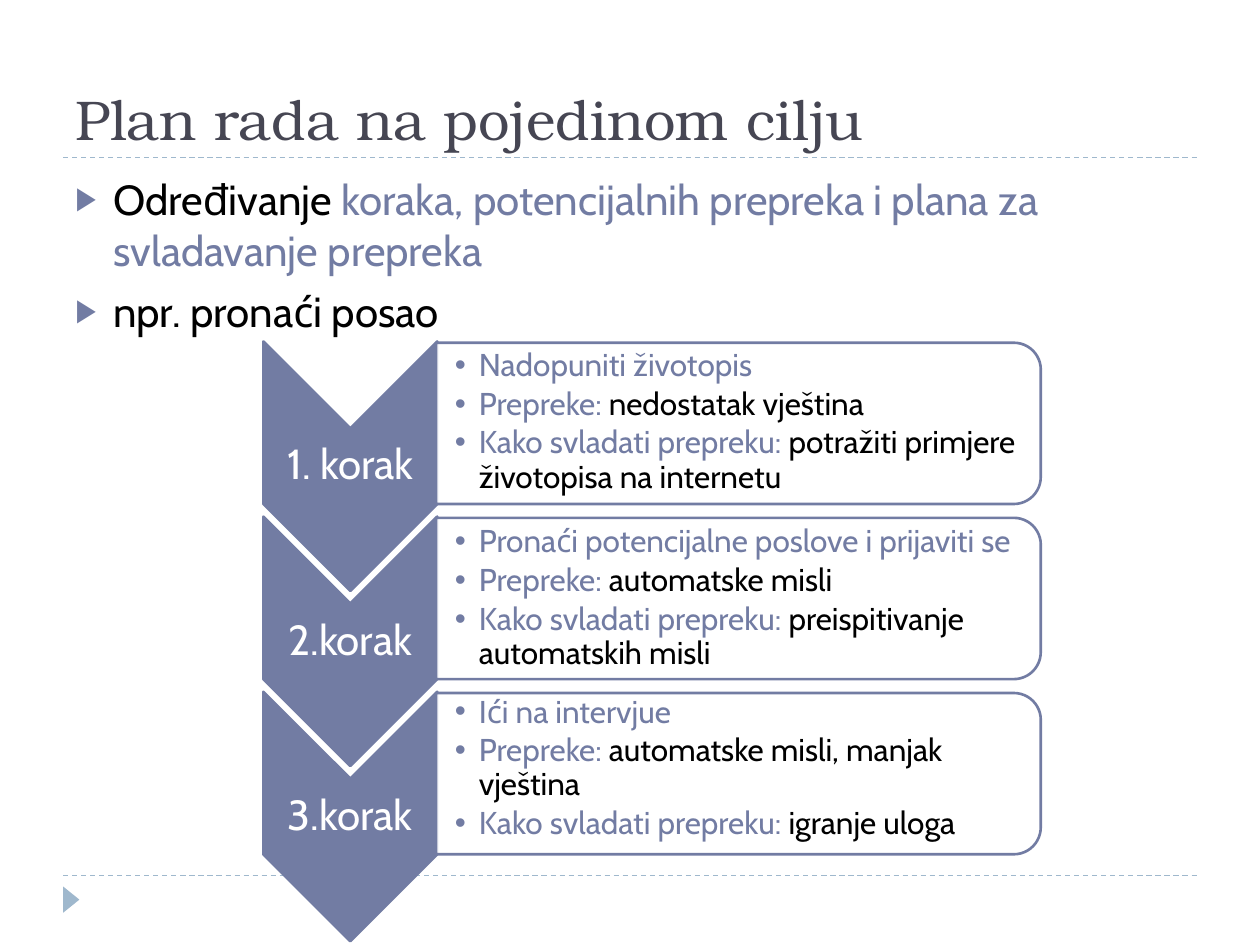
from lxml import etree
from pptx import Presentation
from pptx import util as u
from pptx.dml.color import RGBColor
from pptx.enum import dml, shapes, text
from pptx.oxml.ns import qn

COLORS = {"accent": "727CA3", "rule": "9FB8CD", "title": "464653",
          "black": "000000", "white": "FFFFFF"}
BODY, HEAD = "Cabin", "TeX Gyre Bonum"
COLS, ROWS = 100, 75

INTRO = [
    [("Određivanje ", "black"),
     ("koraka, potencijalnih prepreka i plana za svladavanje prepreka", "accent")],
    [("npr. pronaći posao", "black")],
]
# label, goal, obstacle, solution, rows the text sits above the card's middle
STEPS = [
    ("1. korak", "Nadopuniti životopis", "nedostatak vještina",
     "potražiti primjere životopisa na internetu", 0.1),
    ("2.korak", "Pronaći potencijalne poslove i prijaviti se", "automatske misli",
     "preispitivanje automatskih misli", 0),
    ("3.korak", "Ići na intervjue", "automatske misli, manjak vještina",
     "igranje uloga", 0.4),
]


def rgb(name):
    return RGBColor.from_string(COLORS[name])


def add_bullet(p, char, indent, size=100):
    pPr = p._p.get_or_add_pPr()
    pPr.set("marL", str(u.Inches(indent)))
    pPr.set("indent", str(-u.Inches(indent)))
    clr = etree.SubElement(pPr, qn("a:buClr"))
    etree.SubElement(clr, qn("a:srgbClr"), val=COLORS["accent"])
    etree.SubElement(pPr, qn("a:buSzPct"), val=str(size * 1000))
    etree.SubElement(pPr, qn("a:buFont"), typeface="Arial")
    etree.SubElement(pPr, qn("a:buChar"), char=char)


def write(tf, paragraphs, size, font=BODY, align=text.PP_ALIGN.LEFT,
          anchor=text.MSO_ANCHOR.MIDDLE, insets=(0.1, 0.05, 0.1, 0.05),
          spacing=1.0, before=0, after=0, bullet=None):
    """Fill a frame; each paragraph is a list of (wording, colour name) runs."""
    tf.word_wrap = True
    tf.vertical_anchor = anchor
    tf.margin_left, tf.margin_top, tf.margin_right, tf.margin_bottom = map(u.Inches, insets)
    for i, runs in enumerate(paragraphs):
        p = tf.add_paragraph() if i else tf.paragraphs[0]
        p.alignment, p.line_spacing = align, spacing
        p.space_before, p.space_after = u.Pt(before), u.Pt(after)
        if bullet:
            add_bullet(p, *bullet)
        for wording, color in runs:
            r = p.add_run()
            r.text = wording
            r.font.name, r.font.size = font, u.Pt(size)
            r.font.color.rgb = rgb(color)


class Deck:
    """Places elements by their centre on a grid of COLS by ROWS."""

    def __init__(self):
        self.prs = Presentation()
        self.prs.slide_width, self.prs.slide_height = u.Inches(10), u.Inches(7.5)
        self.s = self.prs.slides.add_slide(self.prs.slide_layouts[6])

    def x(self, cols):
        return round(self.prs.slide_width * cols / COLS)

    def y(self, rows):
        return round(self.prs.slide_height * rows / ROWS)

    def frame(self, cx, cy, w, h):
        return self.x(cx - w / 2), self.y(cy - h / 2), self.x(w), self.y(h)

    def rule(self, row):
        line = self.s.shapes.add_connector(shapes.MSO_CONNECTOR.STRAIGHT,
                                           self.x(5), self.y(row), self.x(95), self.y(row))
        line.line.color.rgb = rgb("rule")
        line.line.width = u.Pt(0.75)
        line.line.dash_style = dml.MSO_LINE.DASH
        etree.SubElement(line._element.spPr, qn("a:effectLst"))

    def turned_shape(self, kind, center, size, fill, outline=None, opacity=100):
        """Add a preset shape turned a quarter clockwise; size is before turning."""
        sp = self.s.shapes.add_shape(kind, *self.frame(*center, *size))
        sp.rotation = 90
        sp.shadow.inherit = False
        sp.fill.solid()
        sp.fill.fore_color.rgb = rgb(fill)
        if opacity < 100:
            clr = sp._element.spPr.find(qn("a:solidFill"))[0]
            etree.SubElement(clr, qn("a:alpha"), val=str(opacity * 1000))
        if outline:
            sp.line.color.rgb = rgb(outline)
            sp.line.width = u.Pt(1.5)
        else:
            sp.line.fill.background()

    def text(self, center, size, paragraphs, pt, **fmt):
        sp = self.s.shapes.add_textbox(*self.frame(*center, *size))
        write(sp.text_frame, paragraphs, pt, **fmt)

    def step(self, row, label, goal, obstacle, solution, lift):
        """Add a chevron with its label and the card beside it."""
        card_row = row - 3.4
        kinds = shapes.MSO_SHAPE
        self.turned_shape(kinds.CHEVRON, (27.8, row), (19.8, 13.8), "accent", "accent")
        self.text((27.8, row), (13.8, 5.9), [[(label, "white")]], 24,
                  align=text.PP_ALIGN.CENTER, insets=(0.02,) * 4, spacing=0.9)
        self.turned_shape(kinds.ROUND_2_SAME_RECTANGLE, (58.6, card_row), (12.8, 48),
                          "white", "accent", opacity=90)
        points = [[(goal, "accent")],
                  [("Prepreke: ", "accent"), (obstacle, "black")],
                  [("Kako svladati prepreku: ", "accent"), (solution, "black")]]
        self.text((58.35, card_row - lift), (47.3, 11.6), points, 18,
                  insets=(0.14, 0.01, 0.01, 0.01), spacing=0.9, after=2.7,
                  bullet=("•", 0.19))


def main():
    deck = Deck()
    for row in (69.5, 12.5):
        deck.rule(row)
    deck.turned_shape(shapes.MSO_SHAPE.ISOSCELES_TRIANGLE, (5.65, 71.4), (2.1, 1.3), "rule")
    deck.text((50, 7.1), (90, 10.8), [[("Plan rada na pojedinom cilju", "title")]], 32,
              font=HEAD, anchor=text.MSO_ANCHOR.BOTTOM)
    deck.text((50, 40.3), (90, 54), INTRO, 24, anchor=text.MSO_ANCHOR.TOP,
              before=6, bullet=("▶", 0.3, 76))
    for i, step in enumerate(STEPS):
        deck.step(37 + 13.9 * i, *step)
    deck.prs.save("out.pptx")


if __name__ == "__main__":
    main()
